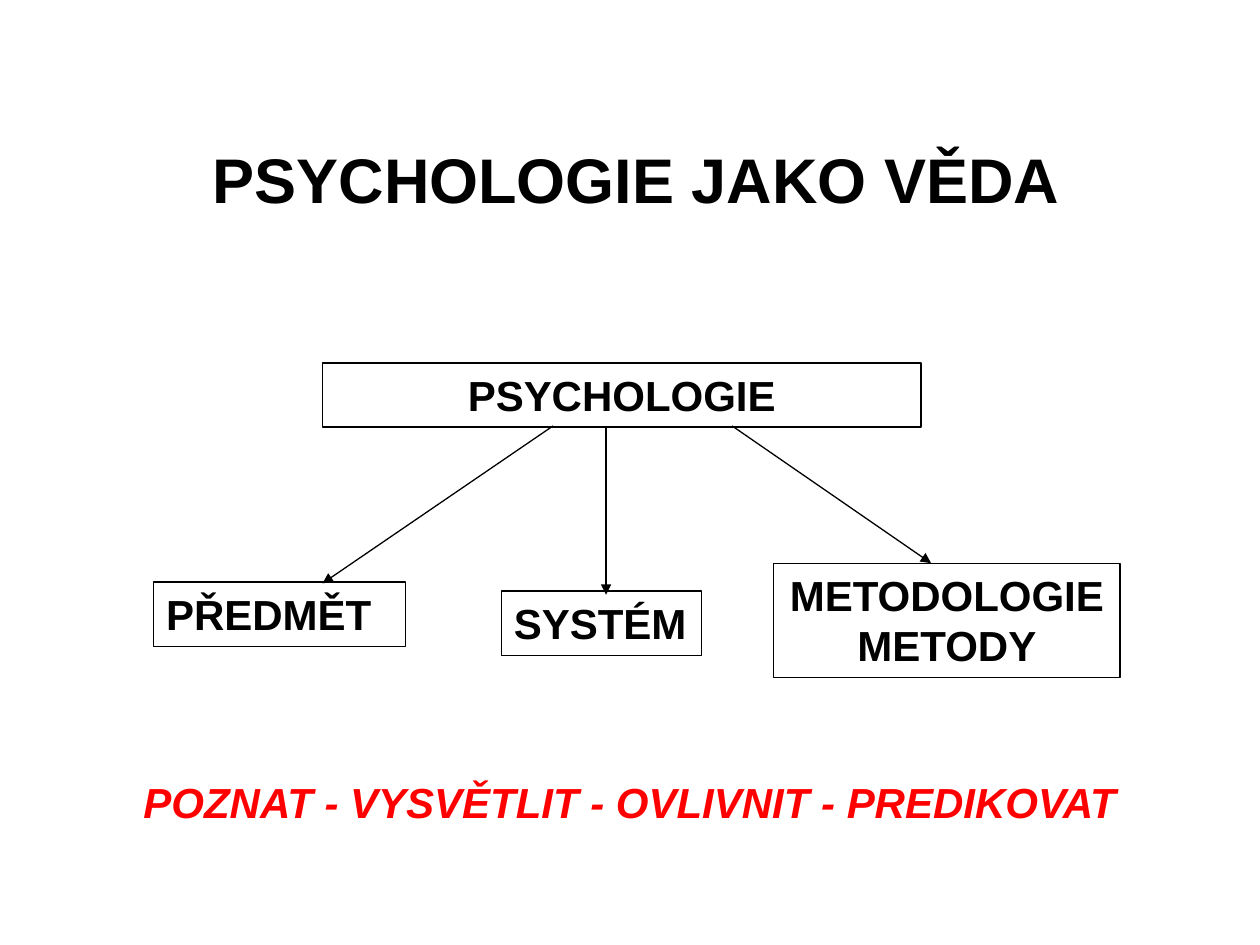
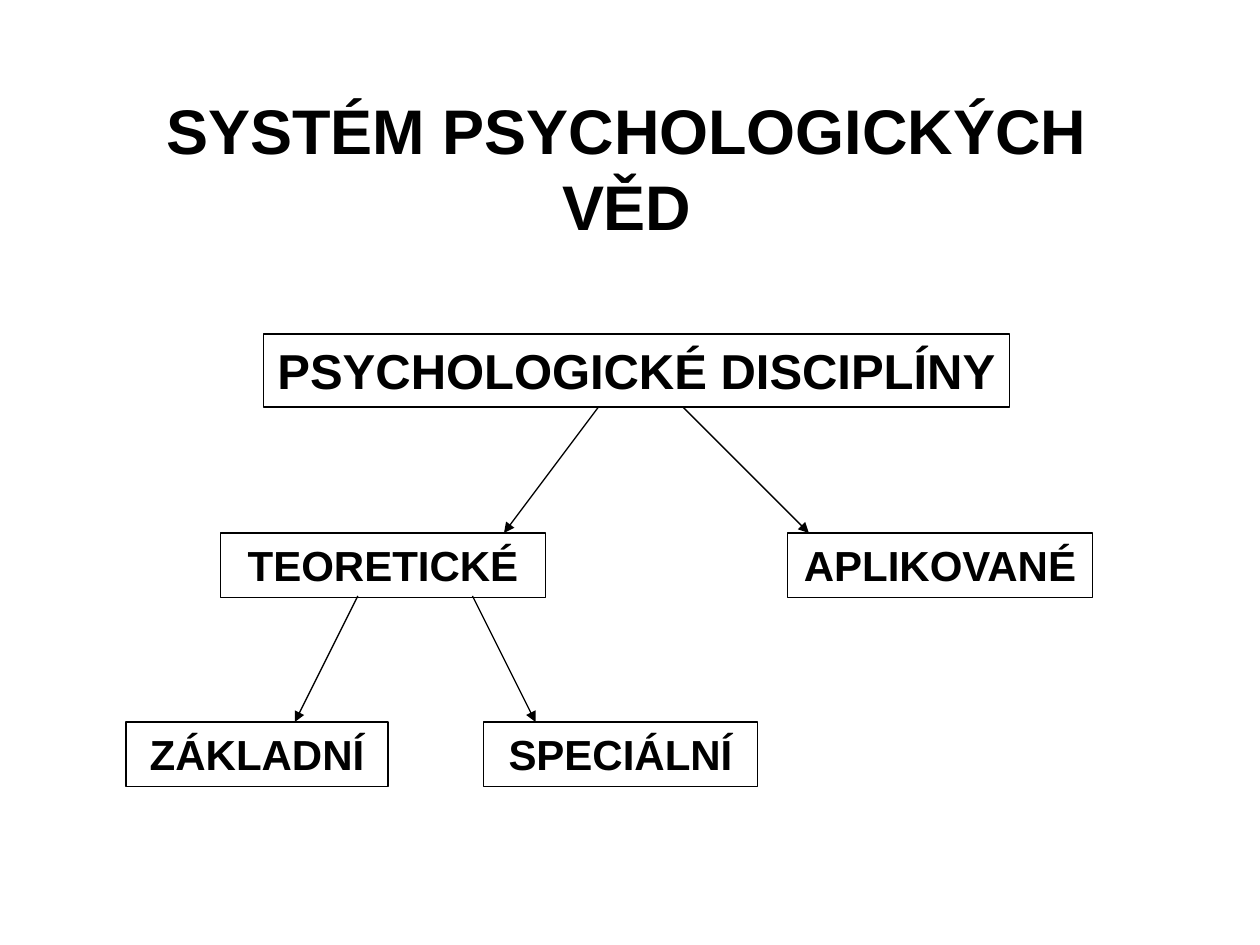
from lxml.etree import SubElement
from pptx import Presentation
from pptx.dml.color import RGBColor
from pptx.enum.shapes import MSO_CONNECTOR, MSO_SHAPE
from pptx.enum.text import MSO_ANCHOR, PP_ALIGN
from pptx.oxml.ns import qn
from pptx.util import Inches, Pt

COLORS = {"ink": "000000", "accent": "FF0000"}
FONT = "Arial"
BOX_HEIGHT = 0.51


class Deck:
    """Holds the shared style and the current slide."""

    def __init__(self):
        self.presentation = Presentation()
        self.presentation.slide_width = Inches(10)
        self.presentation.slide_height = Inches(7.5)
        self.slide = None

    def new_slide(self):
        self.slide = self.presentation.slides.add_slide(self.presentation.slide_layouts[6])

    def label(self, shape, words, size, color="ink", italic=False, align=PP_ALIGN.CENTER):
        frame = shape.text_frame
        frame.word_wrap = True
        frame.vertical_anchor = MSO_ANCHOR.TOP
        frame.text = words
        paragraph = frame.paragraphs[0]
        paragraph.alignment = align
        font = paragraph.font
        font.name, font.size = FONT, Pt(size)
        font.bold, font.italic = True, italic
        font.color.rgb = RGBColor.from_string(COLORS[color])

    def text(self, words, left, top, width, height, size=36, **style):
        shape = self.slide.shapes.add_textbox(*map(Inches, (left, top, width, height)))
        self.label(shape, words, size, **style)

    def box(self, words, left, top, width, height=BOX_HEIGHT, size=24, **style):
        shape = self.slide.shapes.add_shape(
            MSO_SHAPE.RECTANGLE, *map(Inches, (left, top, width, height)))
        shape.shadow.inherit = False
        shape.fill.background()
        self.outline(shape)
        self.label(shape, words, size, **style)

    def outline(self, shape):
        shape.line.color.rgb = RGBColor.from_string(COLORS["ink"])
        shape.line.width = Pt(0.75)

    def arrow(self, *ends):
        arrow = self.slide.shapes.add_connector(MSO_CONNECTOR.STRAIGHT, *map(Inches, ends))
        self.outline(arrow)
        properties = arrow._element.spPr
        SubElement(properties.find(qn("a:ln")), qn("a:tailEnd"), type="triangle")
        SubElement(properties, qn("a:effectLst"))


def science_slide(deck):
    deck.new_slide()
    deck.box("PSYCHOLOGIE", 2.56, 2.88, 4.75)
    deck.box("PŘEDMĚT", 1.22, 4.62, 2, align=PP_ALIGN.LEFT)
    deck.box("SYSTÉM", 3.98, 4.69, 1.59, align=PP_ALIGN.LEFT)
    deck.box("METODOLOGIE\vMETODY", 6.14, 4.47, 2.75, 0.91)
    deck.text("PSYCHOLOGIE JAKO VĚDA", 0.91, 1.07, 8.28, 0.7)
    for start, end, tip in ((4.39, 2.56, 4.63), (5.81, 7.39, 4.47), (4.81, 4.81, 4.72)):
        deck.arrow(start, 3.38, end, tip)
    deck.text("POZNAT - VYSVĚTLIT - OVLIVNIT - PREDIKOVAT", 0, 6.11, 10, 0.5,
              size=24, color="accent", italic=True)


def disciplines_slide(deck):
    deck.new_slide()
    deck.text("SYSTÉM PSYCHOLOGICKÝCH VĚD", 1.06, 0.68, 7.83, 1.31)
    deck.box("PSYCHOLOGICKÉ DISCIPLÍNY", 2.09, 2.65, 5.92, 0.58, size=28)
    branch_top, leaf_top = 4.23, 5.73
    for words, left, top, width in (
        ("TEORETICKÉ", 1.75, branch_top, 2.58),
        ("APLIKOVANÉ", 6.25, branch_top, 2.42),
        ("ZÁKLADNÍ", 1, leaf_top, 2.08),
        ("SPECIÁLNÍ", 3.84, leaf_top, 2.17),
    ):
        deck.box(words, left, top, width)
    for start, end, tip in (
        (4.75, 4, branch_top), (5.42, 6.42, branch_top),
        (2.84, 2.34, leaf_top), (3.75, 4.25, leaf_top),
    ):
        deck.arrow(start, tip - 1, end, tip)


def main():
    deck = Deck()
    science_slide(deck)
    disciplines_slide(deck)
    deck.presentation.save("out.pptx")


if __name__ == "__main__":
    main()
